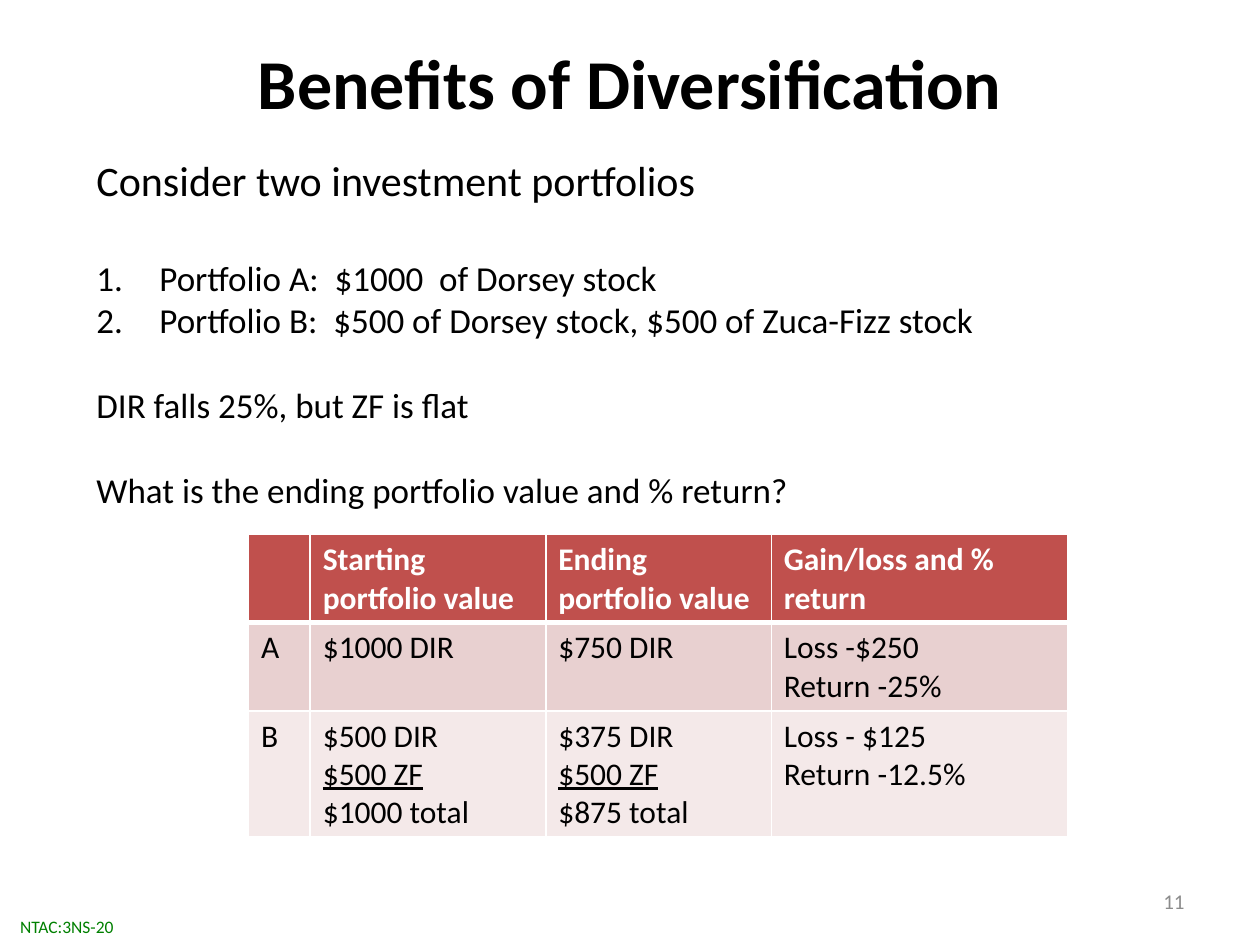
from lxml import etree
from pptx import Presentation
from pptx.dml.color import RGBColor
from pptx.enum.text import MSO_ANCHOR, PP_ALIGN
from pptx.oxml.ns import qn
from pptx.util import Pt

LEFT, CENTER, RIGHT = PP_ALIGN.LEFT, PP_ALIGN.CENTER, PP_ALIGN.RIGHT
TOP, MIDDLE = MSO_ANCHOR.TOP, MSO_ANCHOR.MIDDLE
TITLE_ONLY = 5

BLACK = RGBColor(0x00, 0x00, 0x00)
WHITE = RGBColor(0xFF, 0xFF, 0xFF)
GREEN = RGBColor(0x00, 0x80, 0x00)
GRAY = RGBColor(0x8C, 0x8C, 0x8C)
ROW_FILLS = [RGBColor(0xC0, 0x50, 0x4D), RGBColor(0xE8, 0xD0, 0xD0), RGBColor(0xF4, 0xE9, 0xE9)]

QUESTION_LINES = [
    ("Consider two investment portfolios", 24, 0, False),
    ("Portfolio A:  $1000  of Dorsey stock", 20, 29.3, True),
    ("Portfolio B:  $500 of Dorsey stock, $500 of Zuca-Fizz stock", 20, 0, True),
    ("DIR falls 25%, but ZF is flat", 20, 24.4, False),
    ("What is the ending portfolio value and % return?", 20, 24.4, False),
]
COLUMN_WIDTHS = [35.3, 134.6, 128.9, 169.2]
ROW_HEIGHTS = [50.4, 50.4, 72]
RESULTS = [
    ["", "Starting portfolio value", "Ending portfolio value", "Gain/loss and % return"],
    ["A", "$1000 DIR", "$750 DIR", "Loss -$250\nReturn -25%"],
    ["B", "$500 DIR\n$500 ZF\n$1000 total", "$375 DIR\n$500 ZF\n$875 total",
     "Loss - $125\nReturn -12.5%"],
]
UNDERLINED = "$500 ZF"


def set_font(paragraph, size, color, bold=False):
    font = paragraph.font
    font.name, font.size, font.bold = "Calibri", Pt(size), bold
    font.color.rgb = color


def add_title(slide, left, top, width, height):
    title = slide.shapes.title
    title.left, title.top, title.width, title.height = Pt(left), Pt(top), Pt(width), Pt(height)
    title.text_frame.text = "Benefits of Diversification"
    title.text_frame.vertical_anchor = MIDDLE
    heading = title.text_frame.paragraphs[0]
    heading.alignment = CENTER
    set_font(heading, 40, BLACK, True)


def add_frame(slide, left, top, width, height, anchor):
    frame = slide.shapes.add_textbox(Pt(left), Pt(top), Pt(width), Pt(height)).text_frame
    frame.word_wrap = True
    frame.vertical_anchor = anchor
    return frame


def number_line(paragraph):
    properties = paragraph._p.get_or_add_pPr()
    properties.set("marL", str(Pt(36)))
    properties.set("indent", str(-Pt(36)))
    etree.SubElement(properties, qn("a:buFont"), typeface="+mj-lt")
    etree.SubElement(properties, qn("a:buAutoNum"), type="arabicPeriod")


def add_question(slide, left, top, width, height):
    frame = add_frame(slide, left, top, width, height, TOP)
    for index, (text, size, gap, numbered) in enumerate(QUESTION_LINES):
        line = frame.add_paragraph() if index else frame.paragraphs[0]
        line.text = text
        line.space_before = Pt(gap)
        if numbered:
            number_line(line)
        set_font(line, size, BLACK)


def add_label(slide, left, top, width, height, text, size, color, alignment, inset):
    frame = add_frame(slide, left, top, width, height, MIDDLE)
    frame.margin_left = frame.margin_right = Pt(inset)
    frame.margin_top = frame.margin_bottom = 0
    label = frame.paragraphs[0]
    label.text = text
    label.alignment = alignment
    set_font(label, size, color)


def set_borders(cell, top_width, bottom_width):
    properties = cell._tc.get_or_add_tcPr()
    for side, width in zip("LRTB", (1, 1, top_width, bottom_width)):
        border = etree.SubElement(properties, qn(f"a:ln{side}"), w=str(Pt(width)))
        fill = etree.SubElement(border, qn("a:solidFill"))
        etree.SubElement(fill, qn("a:srgbClr"), val=str(WHITE))


def add_results(slide, left, top):
    table = slide.shapes.add_table(
        len(RESULTS), len(COLUMN_WIDTHS), Pt(left), Pt(top),
        Pt(sum(COLUMN_WIDTHS)), Pt(sum(ROW_HEIGHTS))).table
    for column, width in zip(table.columns, COLUMN_WIDTHS):
        column.width = Pt(width)
    for row_index, texts in enumerate(RESULTS):
        table.rows[row_index].height = Pt(ROW_HEIGHTS[row_index])
        is_header = row_index == 0
        for column_index, text in enumerate(texts):
            cell = table.cell(row_index, column_index)
            cell.text = text
            set_borders(cell, 3 if row_index == 1 else 1, 3 if is_header else 1)
            cell.fill.solid()
            cell.fill.fore_color.rgb = ROW_FILLS[row_index]
            for line in cell.text_frame.paragraphs:
                set_font(line, 18, WHITE if is_header else BLACK, is_header)
                line.font.underline = line.text == UNDERLINED


def main():
    deck = Presentation()
    deck.slide_width, deck.slide_height = Pt(720), Pt(540)
    slide = deck.slides.add_slide(deck.slide_layouts[TITLE_ONLY])
    add_label(slide, 0, 519, 76.3, 21, "NTAC:3NS-20", 10, GREEN, CENTER, 0)
    add_title(slide, 0, 1.5, 720, 90)
    add_question(slide, 48, 85, 654.5, 211)
    add_label(slide, 516, 500.5, 168, 28.75, "11", 12, GRAY, RIGHT, 7.2)
    add_results(slide, 142, 305.3)
    deck.save("out.pptx")


if __name__ == "__main__":
    main()
